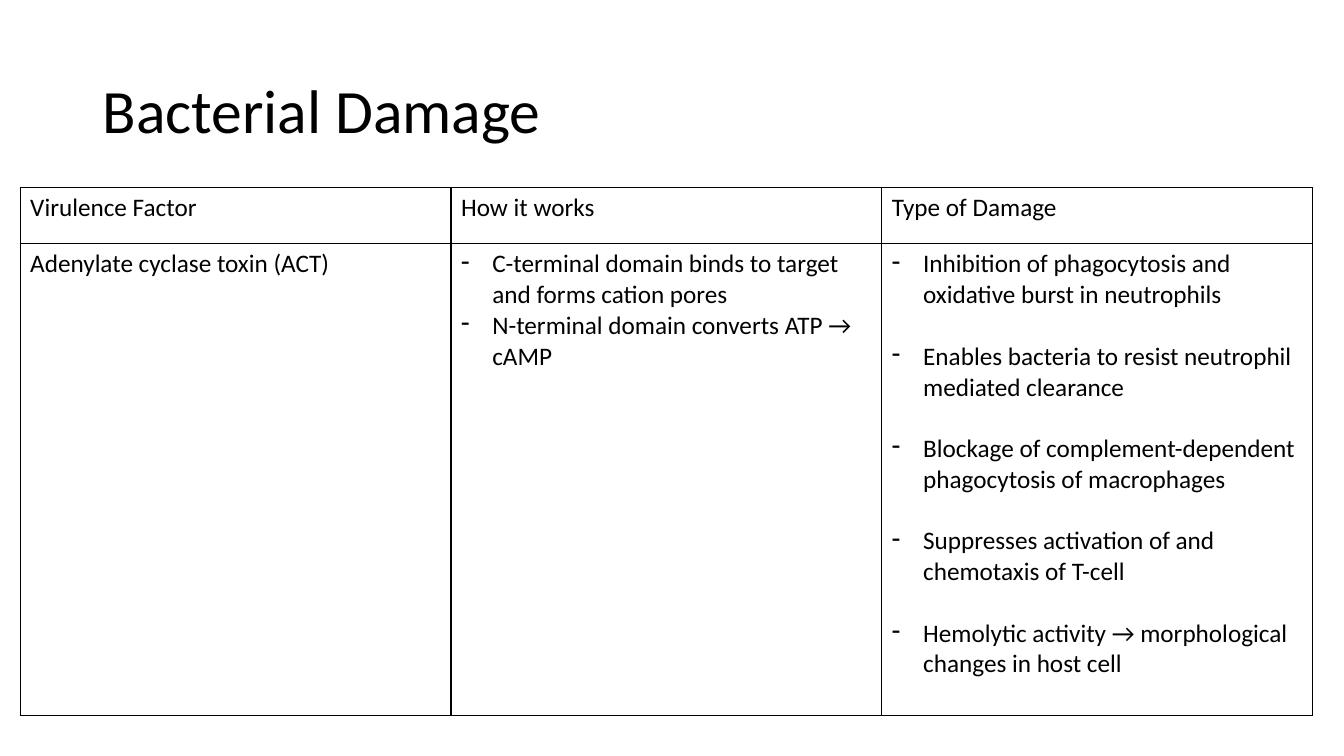
import pptx
import pptx.dml.color
import pptx.enum.text
import pptx.oxml
import pptx.oxml.ns
import pptx.util

WIDTH, HEIGHT = 13.33, 7.5
COLORS = {"ink": "000000"}
HEADINGS = ["Virulence Factor", "How it works", "Type of Damage"]
TOXIN = "Adenylate cyclase toxin (ACT)"
MECHANISMS = [
    "C-terminal domain binds to target and forms cation pores",
    "N-terminal domain converts ATP → cAMP",
]
DAMAGE = [
    "Inhibition of phagocytosis and oxidative burst in neutrophils",
    "Enables bacteria to resist neutrophil mediated clearance",
    "Blockage of complement-dependent phagocytosis of macrophages",
    "Suppresses activation of and chemotaxis of T-cell",
    "Hemolytic activity → morphological changes in host cell",
]


class SlideBuilder:
    font = "Calibri"
    title_size = 44
    body_size = 18
    bullet_indent = 0.31
    border_width = 1

    def __init__(self, presentation):
        self.presentation = presentation
        self.slide = presentation.slides.add_slide(presentation.slide_layouts[6])

    def box(self, left, top, width, height):
        """Turn shares of the slide's size into lengths."""
        full_width = self.presentation.slide_width
        full_height = self.presentation.slide_height
        return (int(left * full_width), int(top * full_height),
                int(width * full_width), int(height * full_height))

    def style(self, paragraph, size):
        for run in paragraph.runs:
            run.font.name = self.font
            run.font.size = pptx.util.Pt(size)
            run.font.color.rgb = pptx.dml.color.RGBColor.from_string(COLORS["ink"])

    def title(self, text, *shares):
        text_frame = self.slide.shapes.add_textbox(*self.box(*shares)).text_frame
        text_frame.word_wrap = True
        text_frame.vertical_anchor = pptx.enum.text.MSO_ANCHOR.MIDDLE
        text_frame.text = text
        paragraph = text_frame.paragraphs[0]
        paragraph.line_spacing = 0.9
        self.style(paragraph, self.title_size)

    def table(self, columns, row_shares, *shares):
        left, top, width, height = self.box(*shares)
        table = self.slide.shapes.add_table(
            len(row_shares), columns, left, top, width, height).table
        table.first_row = table.horz_banding = False
        for column in table.columns:
            column.width = width // columns
        for row, share in zip(table.rows, row_shares):
            row.height = int(height * share)
            for cell in row.cells:
                cell.fill.background()
                self.borders(cell)
        return table

    def borders(self, cell):
        properties = cell._tc.get_or_add_tcPr()
        width = pptx.util.Pt(self.border_width)
        for position, side in enumerate("LRTB"):
            line = pptx.oxml.parse_xml(
                f'<a:ln{side} {pptx.oxml.ns.nsdecls("a")} w="{width}"><a:solidFill>'
                f'<a:srgbClr val="{COLORS["ink"]}"/></a:solidFill></a:ln{side}>')
            properties.insert(position, line)

    def cell_text(self, cell, text):
        cell.text_frame.text = text
        self.style(cell.text_frame.paragraphs[0], self.body_size)

    def cell_bullets(self, cell, items, gap=0):
        cell.text_frame.text = "\n".join(items)
        indent = pptx.util.Inches(self.bullet_indent)
        for index, paragraph in enumerate(cell.text_frame.paragraphs):
            self.style(paragraph, self.body_size)
            paragraph.space_before = pptx.util.Pt(gap if index else 0)
            properties = paragraph._p.get_or_add_pPr()
            properties.set("marL", str(indent))
            properties.set("indent", str(-indent))
            properties.append(pptx.oxml.parse_xml(
                f'<a:buChar {pptx.oxml.ns.nsdecls("a")} char="-"/>'))


def main():
    presentation = pptx.Presentation()
    presentation.slide_width = pptx.util.Inches(WIDTH)
    presentation.slide_height = pptx.util.Inches(HEIGHT)
    builder = SlideBuilder(presentation)
    builder.title("Bacterial Damage",
                  0.92 / WIDTH, 0.4 / HEIGHT, 11.5 / WIDTH, 1.45 / HEIGHT)
    header_share = 0.56 / 5.24
    table = builder.table(len(HEADINGS), [header_share, 1 - header_share],
                          0.2 / WIDTH, 1.86 / HEIGHT, 12.82 / WIDTH, 5.24 / HEIGHT)
    for column, heading in enumerate(HEADINGS):
        builder.cell_text(table.cell(0, column), heading)
    builder.cell_text(table.cell(1, 0), TOXIN)
    builder.cell_bullets(table.cell(1, 1), MECHANISMS)
    builder.cell_bullets(table.cell(1, 2), DAMAGE, gap=22)
    presentation.save("out.pptx")


if __name__ == "__main__":
    main()
